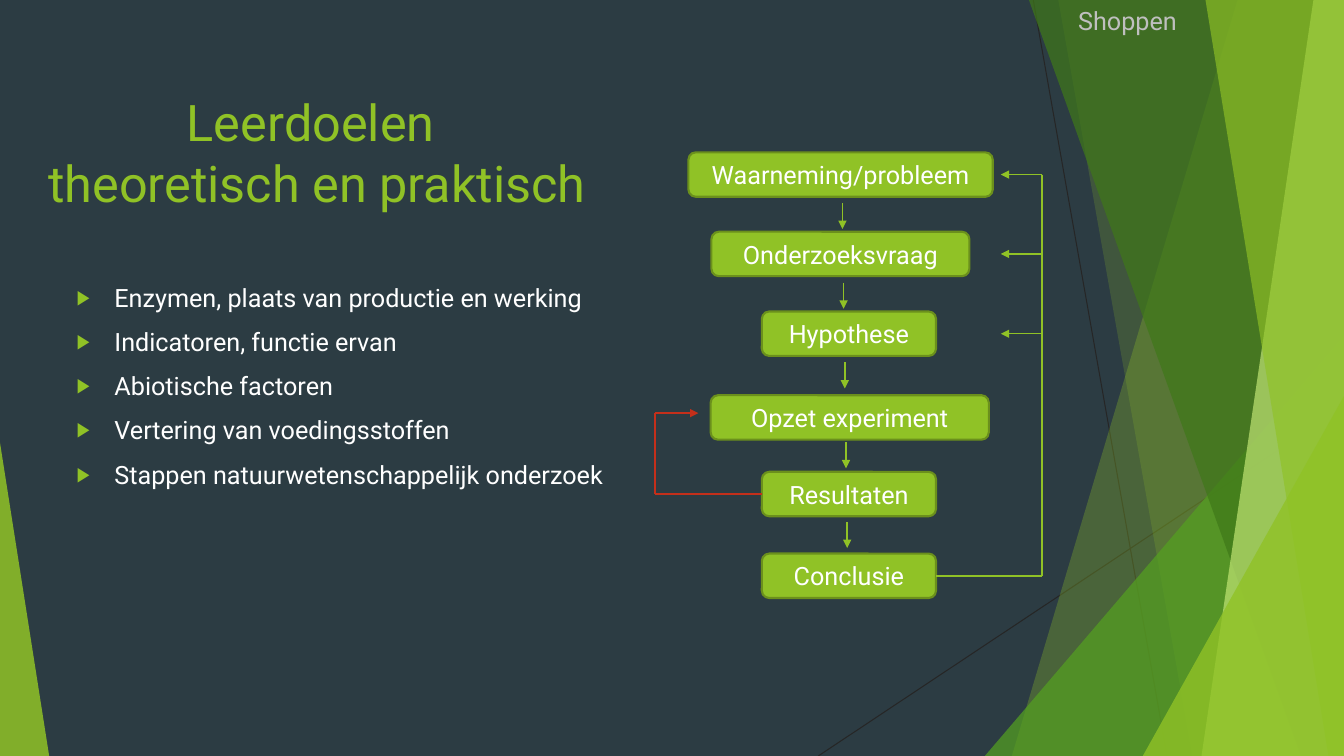
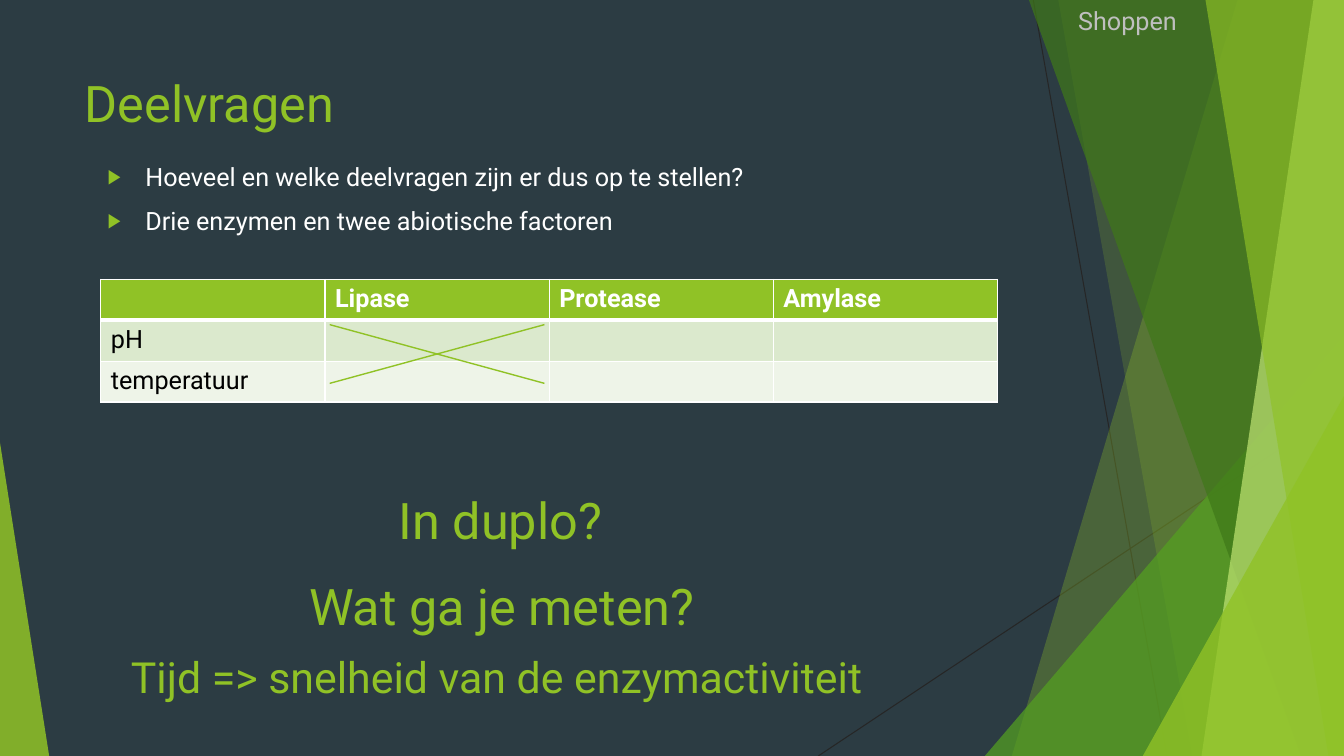
from lxml import etree
from pptx import Presentation
from pptx.dml.color import RGBColor
from pptx.enum import shapes as kinds, text as modes
from pptx.oxml import ns
from pptx.util import Cm, Pt

FONT = "Roboto"
SLATE = RGBColor(0x2C, 0x3C, 0x43)
LIME = RGBColor(0x90, 0xC2, 0x26)
LIME_DARK = RGBColor(0x6B, 0x90, 0x1C)
LIME_LIGHT = RGBColor(0xC0, 0xE4, 0x74)
GREEN = RGBColor(0x54, 0xA0, 0x21)
FOREST = RGBColor(0x3F, 0x78, 0x19)
RED = RGBColor(0xC4, 0x2F, 0x1A)
CHARCOAL = RGBColor(0x26, 0x26, 0x26)
GREY = RGBColor(0xBF, 0xBF, 0xBF)
WHITE = RGBColor(0xFF, 0xFF, 0xFF)
BLACK = RGBColor(0, 0, 0)
ROW_FILLS = [LIME, RGBColor(0xDB, 0xE9, 0xCD), RGBColor(0xEE, 0xF4, 0xE8)]

WIDTH, HEIGHT = 33.87, 19.05
TITLE_SIZE = 36
NODE_HEIGHT = 1.12


def add_xml(parent, tag, **attributes):
    return etree.SubElement(parent, ns.qn(tag), attributes)


def place(shape, left, top, width, height):
    shape.left, shape.top = Cm(left), Cm(top)
    shape.width, shape.height = Cm(width), Cm(height)


def write(frame, *lines, size=18, color=WHITE, bold=False,
          align=modes.PP_ALIGN.LEFT, anchor=modes.MSO_ANCHOR.TOP, bullets=False):
    """Fill a text frame with one paragraph for each line."""
    frame.word_wrap = True
    frame.auto_size = modes.MSO_AUTO_SIZE.NONE
    frame.vertical_anchor = anchor
    for index, line in enumerate(lines):
        paragraph = frame.add_paragraph() if index else frame.paragraphs[0]
        paragraph.text = line
        paragraph.alignment = align
        for run in paragraph.runs:
            run.font.name, run.font.size, run.font.bold = FONT, Pt(size), bold
            run.font.color.rgb = color
        if bullets:
            add_bullet(paragraph)


def add_bullet(paragraph):
    paragraph.space_before = Pt(10)
    properties = paragraph._p.get_or_add_pPr()
    indent = Cm(0.95)
    properties.set("marL", str(indent))
    properties.set("indent", str(-indent))
    bullet_color = add_xml(properties, "a:buClr")
    add_xml(bullet_color, "a:srgbClr", val=str(LIME))
    add_xml(properties, "a:buSzPct", val="80000")
    add_xml(properties, "a:buChar", char="▶")


def add_text(slide, line, left, top, width, height, **style):
    box = slide.shapes.add_textbox(Cm(left), Cm(top), Cm(width), Cm(height))
    write(box.text_frame, line, **style)


def add_line(shapes, start, end, color=LIME, width=1, arrow=False):
    points = [Cm(value) for value in (*start, *end)]
    line = shapes.add_connector(kinds.MSO_CONNECTOR.STRAIGHT, *points)
    line.line.color.rgb = color
    line.line.width = Pt(width)
    if arrow:
        add_xml(line.line._get_or_add_ln(), "a:tailEnd", type="triangle")
    add_xml(line.element.spPr, "a:effectLst")
    return line


def tint(shape, color, opacity):
    shape.shadow.inherit = False
    shape.line.fill.background()
    shape.fill.solid()
    shape.fill.fore_color.rgb = color
    color_element = shape.element.spPr.find(".//" + ns.qn("a:srgbClr"))
    add_xml(color_element, "a:alpha", val=str(opacity * 1000))


def add_strip(shapes, top_x, bottom_x, color, opacity):
    """Draw a slanted band that reaches the right edge of the slide."""
    corners = [(WIDTH, 0), (WIDTH, HEIGHT), (bottom_x, HEIGHT)]
    builder = shapes.build_freeform(Cm(top_x), 0)
    builder.add_line_segments([(Cm(x), Cm(y)) for x, y in corners])
    tint(builder.convert_to_shape(), color, opacity)


def add_wedge(shapes, left, top, width, apex, color, opacity):
    """Draw a triangle that stands on the bottom of the slide."""
    wedge = shapes.add_shape(kinds.MSO_SHAPE.ISOSCELES_TRIANGLE, Cm(left), Cm(top),
                             Cm(width), Cm(HEIGHT - top))
    wedge.adjustments[0] = apex
    tint(wedge, color, opacity)


def draw_facets(shapes):
    add_line(shapes, (26.04, 0), (29.41, HEIGHT), CHARCOAL, 0.75)
    add_line(shapes, (WIDTH, 10.24), (20.62, HEIGHT), CHARCOAL, 0.75)
    add_strip(shapes, 31.19, 25.5, LIME, 30)
    add_strip(shapes, 26.67, 30.05, LIME, 20)
    add_wedge(shapes, 24.82, 8.46, 9.05, 1, GREEN, 72)
    add_strip(shapes, 25.93, 32.79, FOREST, 70)
    add_strip(shapes, 33.1, 30.28, LIME_LIGHT, 70)
    add_strip(shapes, 30.38, 33.48, LIME, 65)
    add_wedge(shapes, 28.8, 9.98, 5.07, 1, LIME, 80)
    add_wedge(shapes, 0, 11.15, 1.24, 0, LIME, 85)


def prepare_layout(presentation):
    """Give the title-and-content layout its background, title size and no footers."""
    layout = presentation.slide_layouts[1]
    layout.background.fill.solid()
    layout.background.fill.fore_color.rgb = SLATE
    for placeholder in list(layout.placeholders):
        if placeholder.placeholder_format.idx >= 10:
            placeholder.element.getparent().remove(placeholder.element)
    title_style = presentation.slide_master.element.find(".//" + ns.qn("p:titleStyle"))
    title_style.find(".//" + ns.qn("a:defRPr")).set("sz", str(TITLE_SIZE * 100))
    return layout


def add_slide(presentation, layout, title, title_box, items, items_box,
              align=modes.PP_ALIGN.LEFT):
    slide = presentation.slides.add_slide(layout)
    body = slide.placeholders[1]
    place(slide.shapes.title, *title_box)
    write(slide.shapes.title.text_frame, title, size=TITLE_SIZE, color=LIME, align=align)
    place(body, *items_box)
    write(body.text_frame, *items, bullets=True)
    add_text(slide, "Shoppen", 26.92, 0, 3.33, 1.02, color=GREY)
    return slide


def add_node(slide, label, left, top, width):
    node = slide.shapes.add_shape(kinds.MSO_SHAPE.ROUNDED_RECTANGLE, Cm(left), Cm(top),
                                  Cm(width), Cm(NODE_HEIGHT))
    node.shadow.inherit = False
    node.fill.solid()
    node.fill.fore_color.rgb = LIME
    node.line.color.rgb = LIME_DARK
    node.line.width = Pt(1.5)
    write(node.text_frame, label, align=modes.PP_ALIGN.CENTER,
          anchor=modes.MSO_ANCHOR.MIDDLE)
    return node


def add_research_cycle(slide, left, top):
    steps = [
        ("Waarneming/probleem", 0.84, 0, 7.67),
        ("Onderzoeksvraag", 1.42, 2, 6.5),
        ("Hypothese", 2.69, 4.01, 4.39),
        ("Opzet experiment", 1.4, 6.12, 7.01),
        ("Resultaten", 2.69, 8.05, 4.39),
        ("Conclusie", 2.69, 10.11, 4.39),
    ]
    nodes = [add_node(slide, label, left + x, top + y, width)
             for label, x, y, width in steps]
    middles = [top + y + NODE_HEIGHT / 2 for _, _, y, _ in steps]

    for index in range(len(steps) - 1):
        x, y = left + 4.72 + 0.03 * index, top + 1.27 + 2.01 * index
        add_line(slide.shapes, (x, y), (x, y + 0.66), arrow=True)

    retry_y = top + 6.57
    retry = add_line(slide.shapes, (left + 2.69, middles[4]), (left, middles[4]), RED)
    retry.begin_connect(nodes[4], 1)
    add_line(slide.shapes, (left, middles[4]), (left, retry_y), RED)
    add_line(slide.shapes, (left, retry_y), (left + 1.09, retry_y), RED, arrow=True)

    rail = left + 9.75
    feedback = add_line(slide.shapes, (left + 7.08, middles[5]), (rail, middles[5]))
    feedback.begin_connect(nodes[5], 3)
    add_line(slide.shapes, (rail, middles[0]), (rail, middles[5]))
    for y in middles[:3]:
        add_line(slide.shapes, (rail, y), (left + 8.71, y), arrow=True)


def set_borders(cell, bottom):
    properties = cell._tc.get_or_add_tcPr()
    widths = {"a:lnL": 1, "a:lnR": 1, "a:lnT": 1, "a:lnB": bottom}
    for index, (tag, width) in enumerate(widths.items()):
        border = etree.Element(ns.qn(tag), w=str(Pt(width)))
        add_xml(add_xml(border, "a:solidFill"), "a:srgbClr", val=str(WHITE))
        properties.insert(index, border)


def add_enzyme_table(slide, left, top):
    rows = [["", "Lipase", "Protease", "Amylase"],
            ["pH", "", "", ""],
            ["temperatuur", "", "", ""]]
    column_width, row_height = 5.65, 1.03
    table = slide.shapes.add_table(
        len(rows), len(rows[0]), Cm(left), Cm(top),
        Cm(column_width * len(rows[0])), Cm(row_height * len(rows))).table
    for row_index, row in enumerate(rows):
        header = row_index == 0
        for column_index, label in enumerate(row):
            cell = table.cell(row_index, column_index)
            cell.fill.solid()
            cell.fill.fore_color.rgb = ROW_FILLS[row_index]
            set_borders(cell, 3 if header else 1)
            if label:
                write(cell.text_frame, label, bold=header,
                      color=WHITE if header else BLACK)
    cross_left, cross_right = left + 5.77, left + 11.18
    cross_top, cross_bottom = top + 1.14, top + 2.62
    add_line(slide.shapes, (cross_left, cross_top), (cross_right, cross_bottom))
    add_line(slide.shapes, (cross_left, cross_bottom), (cross_right, cross_top))


def add_goals_slide(presentation, layout):
    goals = ["Enzymen, plaats van productie en werking",
             "Indicatoren, functie ervan",
             "Abiotische factoren",
             "Vertering van voedingsstoffen",
             "Stappen natuurwetenschappelijk onderzoek"]
    slide = add_slide(presentation, layout, "Leerdoelen \vtheoretisch en praktisch",
                      (0.46, 2.18, 15.06, 3.66), goals, (1.68, 6.98, 14.12, 7.04),
                      align=modes.PP_ALIGN.CENTER)
    add_research_cycle(slide, 16.51, 3.84)
    return slide


def add_questions_slide(presentation, layout):
    questions = ["Hoeveel en welke deelvragen zijn er dus op te stellen?",
                 "Drie enzymen en twee abiotische factoren"]
    slide = add_slide(presentation, layout, "Deelvragen", (1.88, 1.7, 23.88, 2.2),
                      questions, (2.46, 3.94, 17.73, 2.39))
    add_enzyme_table(slide, 2.54, 7.04)
    for line, left, top, width, size in [
            ("In duplo?", 9.8, 12.19, 8.03, TITLE_SIZE),
            ("Wat ga je meten?", 7.54, 14.38, 10.74, TITLE_SIZE),
            ("Tijd => snelheid van de enzymactiviteit", 3.05, 16.28, 20.47, 30.6)]:
        add_text(slide, line, left, top, width, 2.16, size=size, color=LIME)


def main():
    presentation = Presentation()
    presentation.slide_width, presentation.slide_height = Cm(WIDTH), Cm(HEIGHT)
    layout = prepare_layout(presentation)
    goals_slide = add_goals_slide(presentation, layout)
    add_questions_slide(presentation, layout)

    # Layouts cannot create shapes, so the facets are grouped on a slide and moved.
    facets = goals_slide.shapes.add_group_shape()
    draw_facets(facets.shapes)
    layout.shapes.element.insert(2, facets.element)
    presentation.save("out.pptx")


if __name__ == "__main__":
    main()
